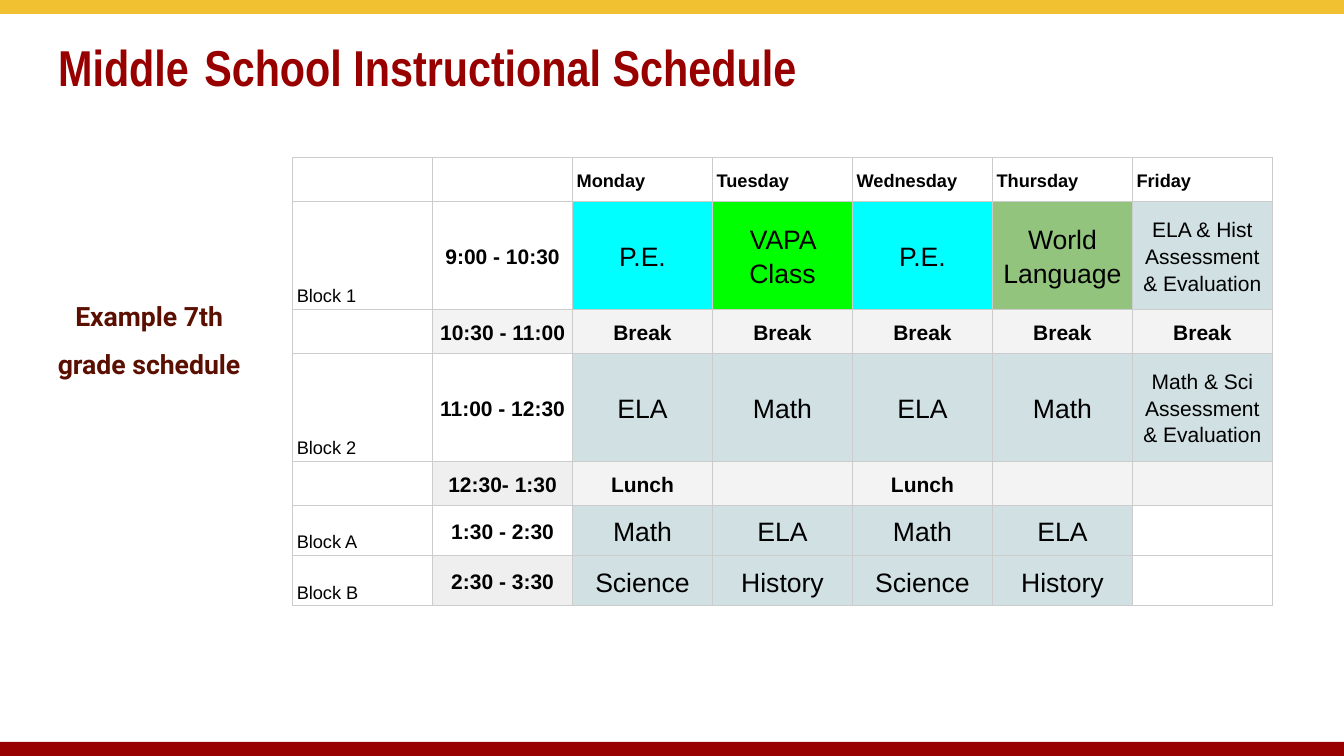
from lxml import etree
from pptx import Presentation
from pptx.dml.color import RGBColor
from pptx.enum import shapes, text
from pptx.oxml import ns
from pptx.util import Pt

THEME = dict(
    gold="F1C131", red="980000", brown="5B0F00", black="000000", rule="CCCCCC",
    aqua="00FFFF", lime="00FF00", sage="93C47D", mist="D0E0E3",
    pale="F3F3F3", grey="EFEFEF", white="FFFFFF",
    title=36, gap=48, side=19, head=13, time=15, lesson=19,
    body="Arial", narrow="Arial Narrow", label="Roboto")

WIDE, HIGH, BAND = 960, 540, 10
TITLE = [("Middle", "title"), (" ", "gap"), ("School Instructional Schedule", "title")]
SIDE = "Example 7th grade schedule"
DAYS = ["Monday", "Tuesday", "Wednesday", "Thursday", "Friday"]
ROWS = [
    (31.5, ["", ""] + DAYS, [None] * 7),
    (77, ["Block 1", "9:00 - 10:30", "P.E.", "VAPA Class", "P.E.", "World Language",
          "ELA & Hist Assessment & Evaluation"],
     [None, None, "aqua", "lime", "aqua", "sage", "mist"]),
    (31.5, ["", "10:30 - 11:00"] + ["Break"] * 5, [None] + ["pale"] * 6),
    (77, ["Block 2", "11:00 - 12:30", "ELA", "Math", "ELA", "Math",
          "Math & Sci Assessment & Evaluation"], [None, None] + ["mist"] * 5),
    (31.5, ["", "12:30- 1:30", "Lunch", "", "Lunch", "", ""],
     [None, "grey"] + ["pale"] * 5),
    (36, ["Block A", "1:30 - 2:30", "Math", "ELA", "Math", "ELA", ""],
     [None, None] + ["mist"] * 4 + [None]),
    (36, ["Block B", "2:30 - 3:30", "Science", "History", "Science", "History", ""],
     [None, "grey"] + ["mist"] * 4 + ["white"]),
]
LEFT, TOP, COL = 209, 112.3, 100


def tint(name):
    return RGBColor.from_string(THEME[name])


def put(item, **vals):
    for key, val in vals.items():
        setattr(item, key, val)


def write(para, words, size, face, hue, bold):
    run = para.add_run()
    run.text = words
    put(run.font, size=Pt(THEME[size]), name=THEME[face], bold=bold)
    run.font.color.rgb = tint(hue)


def band(slide, top):
    bar = slide.shapes.add_shape(shapes.MSO_SHAPE.RECTANGLE, 0, Pt(top), Pt(WIDE), Pt(BAND))
    bar.shadow.inherit = False
    bar.line.fill.background()
    bar.fill.solid()
    return bar.fill.fore_color


def box(slide, area, inset):
    frame = slide.shapes.add_textbox(*map(Pt, area)).text_frame
    put(frame, word_wrap=True, margin_left=0, margin_right=0,
        margin_top=Pt(inset), margin_bottom=0)
    return frame.paragraphs[0]


def edge(cell):
    props = cell._tc.get_or_add_tcPr()
    for spot, side in enumerate(("lnL", "lnR", "lnT", "lnB")):
        line = etree.Element(ns.qn("a:" + side), w=str(Pt(0.75)))
        fill = etree.SubElement(line, ns.qn("a:solidFill"))
        etree.SubElement(fill, ns.qn("a:srgbClr"), val=THEME["rule"])
        props.insert(spot, line)


def style(row, col, words):
    if row == 0 or col == 0:
        return "head", row == 0
    if col == 1 or words in ("Break", "Lunch"):
        return "time", True
    return ("time" if col == 6 else "lesson"), False


def fill(cell, row, col, words, hue):
    block = row > 0 and col == 0
    anchor = text.MSO_ANCHOR.BOTTOM if block else text.MSO_ANCHOR.MIDDLE
    put(cell, margin_left=Pt(3), margin_right=Pt(3), margin_top=Pt(2),
        margin_bottom=Pt(2), vertical_anchor=anchor)
    if hue:
        cell.fill.solid()
        cell.fill.fore_color.rgb = tint(hue)
    else:
        cell.fill.background()
    edge(cell)
    if words:
        para = cell.text_frame.paragraphs[0]
        left = row == 0 or col == 0
        put(para, line_spacing=1.15,
            alignment=text.PP_ALIGN.LEFT if left else text.PP_ALIGN.CENTER)
        size, bold = style(row, col, words)
        write(para, words, size, "body", "black", bold)


def grid(slide):
    tall = sum(row[0] for row in ROWS)
    count = len(DAYS) + 2
    table = slide.shapes.add_table(len(ROWS), count, Pt(LEFT), Pt(TOP),
                                   Pt(COL * count), Pt(tall)).table
    put(table, first_row=False, horz_banding=False)
    for col in table.columns:
        col.width = Pt(COL)
    for r, (high, words, hues) in enumerate(ROWS):
        table.rows[r].height = Pt(high)
        for c, (word, hue) in enumerate(zip(words, hues)):
            fill(table.cell(r, c), r, c, word, hue)


def main():
    deck = Presentation()
    put(deck, slide_width=Pt(WIDE), slide_height=Pt(HIGH))
    slide = deck.slides.add_slide(deck.slide_layouts[6])
    band(slide, 0).rgb = tint("gold")
    band(slide, HIGH - BAND).rgb = tint("red")
    title = box(slide, (41.5, 13, 852, 94), 1)
    for words, size in TITLE:
        write(title, words, size, "narrow", "red", True)
    side = box(slide, (41, 175, 131, 302), 28)
    put(side, alignment=text.PP_ALIGN.CENTER, line_spacing=1.5)
    write(side, SIDE, "side", "label", "brown", True)
    grid(slide)
    deck.save("out.pptx")


if __name__ == "__main__":
    main()
